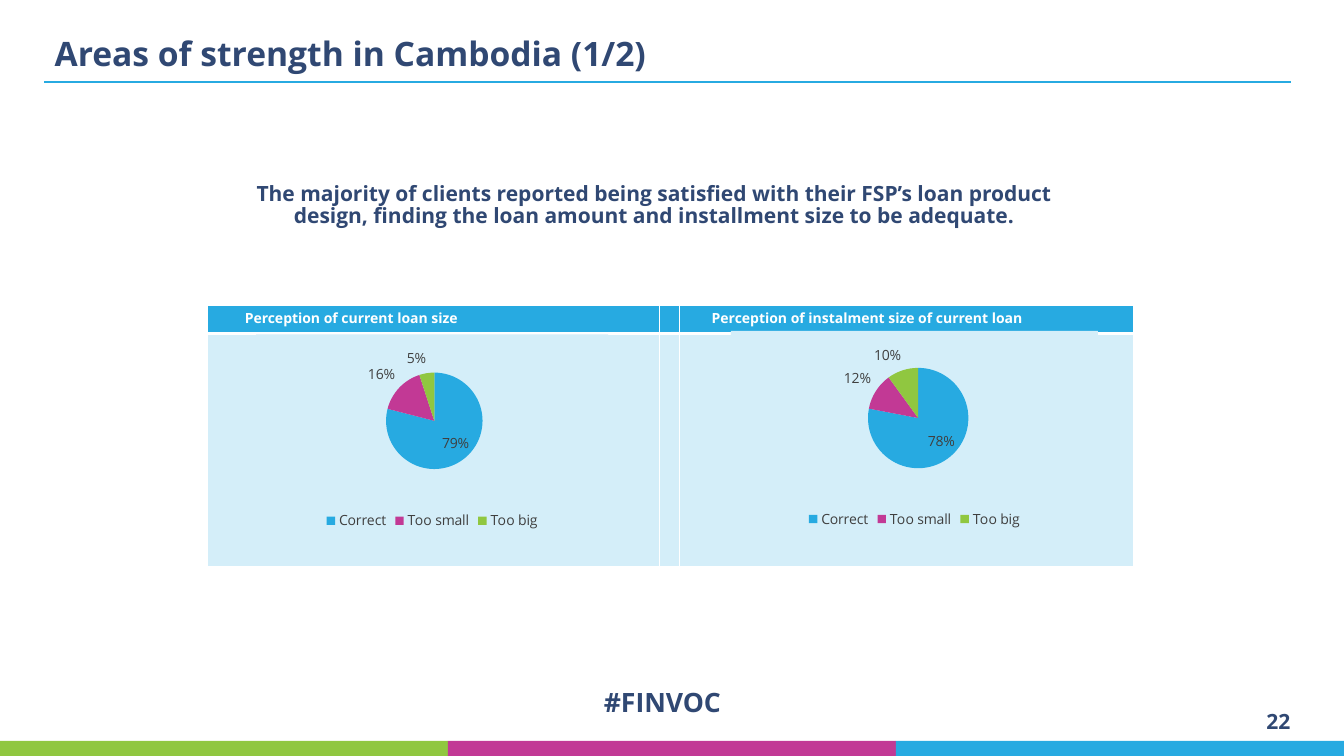
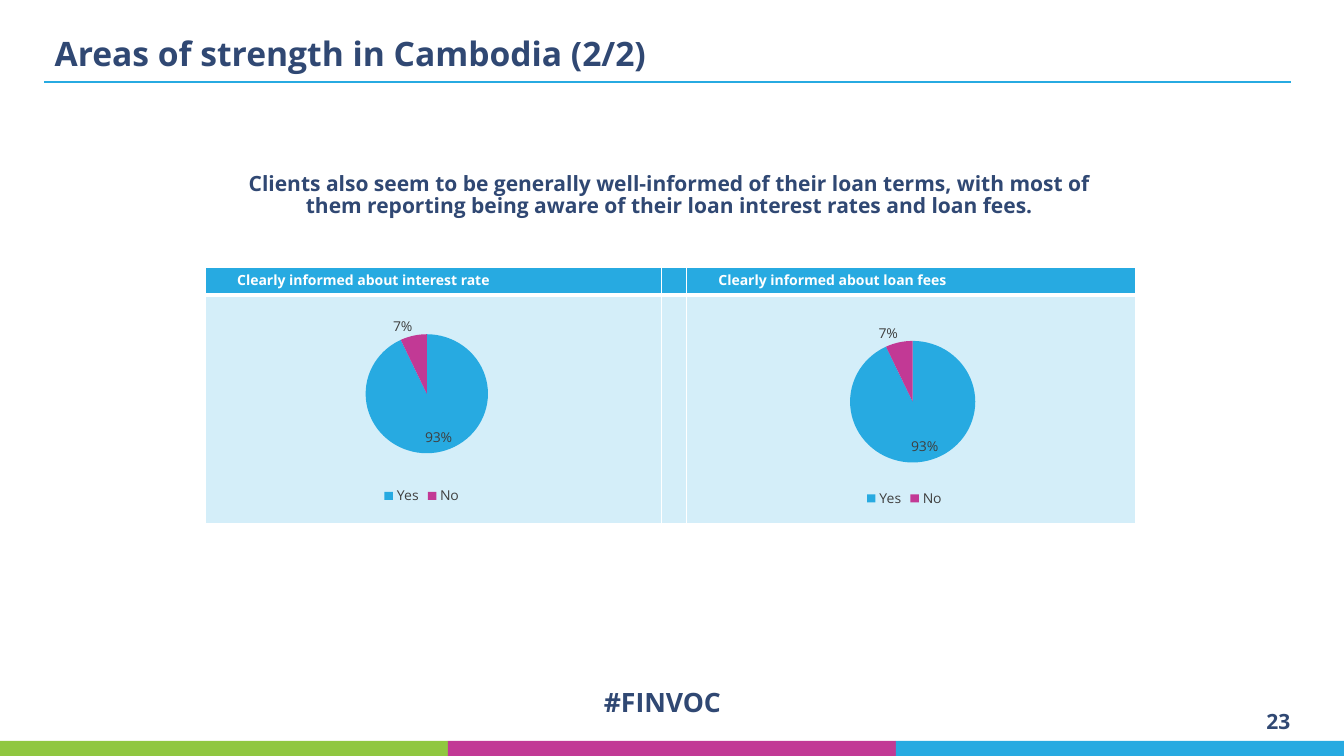
from lxml.etree import SubElement
from pptx import Presentation
from pptx.chart.data import CategoryChartData as ChartData
from pptx.dml.color import RGBColor as RGB
from pptx.enum.chart import XL_CHART_TYPE as CT, XL_LABEL_POSITION as LP, XL_LEGEND_POSITION as LG
from pptx.enum.shapes import MSO_CONNECTOR as CN, MSO_SHAPE as SH
from pptx.enum.text import MSO_ANCHOR as AN, MSO_AUTO_SIZE as AS, PP_ALIGN as AL
from pptx.oxml import parse_xml
from pptx.oxml.ns import nsdecls, qn
from pptx.util import Inches, Pt

COLORS = {"navy": "304873", "blue": "27AAE1", "pink": "C23995", "green": "90C740",
          "pale": "D4EEF9", "gray": "3F3F3F", "white": "FFFFFF"}
SLICES = ["blue", "pink", "green"]
BANDS = ["green", "pink", "blue"]
FONT = "Open Sans"
COLS, ROWS = 160, 90


def rgb(name):
    return RGB.from_string(COLORS[name])


class Deck:
    def __init__(self):
        self.prs = Presentation()
        self.prs.slide_width, self.prs.slide_height = Inches(13.33), Inches(7.5)
        self.s = None

    def x(self, cols):
        return round(self.prs.slide_width * cols / COLS)

    def y(self, rows):
        return round(self.prs.slide_height * rows / ROWS)

    def box(self, left, top, width, height):
        return self.x(left), self.y(top), self.x(width), self.y(height)

    def run(self, p, text, size, color="navy"):
        r = p.add_run()
        r.text = text
        r.font.name, r.font.size, r.font.bold = FONT, Pt(size), True
        r.font.color.rgb = rgb(color)

    def add_slide(self, title, page):
        self.s = self.prs.slides.add_slide(self.prs.slide_layouts[1])
        self.bands()
        self.rule()
        self.placeholder(0, (5.3, 3.5, 137.3, 6.2), title, 24, AL.LEFT, AN.MIDDLE)
        self.label((147.7, 83.4, 7.1, 4.8), page, 15, AL.RIGHT, AN.MIDDLE)
        self.label((70.7, 81.1, 18.2, 5), "#FINVOC", 19)

    def bands(self):
        width = COLS / len(BANDS)
        for i, color in enumerate(BANDS):
            sp = self.s.shapes.add_shape(SH.RECTANGLE, *self.box(i * width, 88.2, width, 1.8))
            sp.shadow.inherit = False
            sp.fill.solid()
            sp.fill.fore_color.rgb = rgb(color)
            sp.line.fill.background()

    def rule(self):
        line = self.s.shapes.add_connector(
            CN.STRAIGHT, self.x(5.3), self.y(9.72), self.x(153.7), self.y(9.72))
        line.line.color.rgb = rgb("blue")
        line.line.width = Pt(1.5)
        SubElement(line.element.spPr, qn("a:effectLst"))

    def placeholder(self, idx, area, text, size, align, anchor):
        sp = self.s.placeholders[idx]
        sp.left, sp.top, sp.width, sp.height = self.box(*area)
        tf = sp.text_frame
        tf.auto_size, tf.vertical_anchor = AS.NONE, anchor
        p = tf.paragraphs[0]
        pPr = p._p.get_or_add_pPr()
        pPr.set("marL", "0")
        pPr.set("indent", "0")
        SubElement(pPr, qn("a:buNone"))
        p.alignment, p.line_spacing, p.space_before = align, 0.9, Pt(0)
        self.run(p, text, size)

    def message(self, area, text):
        self.placeholder(1, area, text, 15, AL.CENTER, AN.TOP)

    def label(self, area, text, size, align=AL.LEFT, anchor=AN.TOP):
        tf = self.s.shapes.add_textbox(*self.box(*area)).text_frame
        tf.word_wrap, tf.vertical_anchor = True, anchor
        p = tf.paragraphs[0]
        p.alignment = align
        self.run(p, text, size)

    def cell(self, cell, fill, borders):
        tcPr = cell._tc.get_or_add_tcPr()
        for side, width in zip("LRTB", borders):
            tcPr.append(parse_xml(
                f'<a:ln{side} {nsdecls("a")} w="{Pt(width)}"><a:solidFill>'
                f'<a:srgbClr val="{COLORS["white"]}"/></a:solidFill></a:ln{side}>'))
        cell.fill.solid()
        cell.fill.fore_color.rgb = rgb(fill)
        cell.margin_left = cell.margin_right = Inches(0.07)
        cell.margin_top, cell.margin_bottom = Inches(0.08), 0

    def panel(self, left, top, widths, heights, heads, indents):
        gf = self.s.shapes.add_table(
            2, 3, *self.box(left, top, sum(widths), sum(heights)))
        table = gf.table
        table.horz_banding = False
        for row, height in zip(table.rows, heights):
            row.height = self.y(height)
        for i, width in enumerate(widths):
            table.columns[i].width = self.x(width)
            self.cell(table.cell(0, i), "blue", (1, 1, 1, 3))
            self.cell(table.cell(1, i), "pale", (1, 1, 3, 1))
        for i, (head, indent) in enumerate(zip(heads, indents)):
            p = table.cell(0, 2 * i).text_frame.paragraphs[0]
            p._p.get_or_add_pPr().set("marL", str(Inches(indent)))
            p.line_spacing = Pt(10)
            self.run(p, head, 10, "white")
        SubElement(table.cell(0, 1).text_frame.paragraphs[0]._p, qn("a:endParaRPr"), sz="800")

    def pie(self, area, cats, vals, plot_area=None):
        data = ChartData()
        data.categories = cats
        data.add_series("Series 1", vals)
        chart = self.s.shapes.add_chart(CT.PIE, *self.box(*area), data).chart
        chart.has_title = False
        chart.font.name, chart.font.size = FONT, Pt(10)
        chart.font.color.rgb = rgb("gray")
        chart.has_legend = True
        chart.legend.position = LG.BOTTOM
        chart.legend.include_in_layout = False
        plot = chart.plots[0]
        plot.vary_by_categories = True
        plot.has_data_labels = True
        labels = plot.data_labels
        labels.show_percentage, labels.show_value = True, False
        labels.number_format, labels.number_format_is_linked = "0%", False
        labels.position = LP.BEST_FIT
        for i, color in zip(range(len(vals)), SLICES):
            fmt = plot.series[0].points[i].format
            fmt.fill.solid()
            fmt.fill.fore_color.rgb = rgb(color)
            fmt.line.fill.background()
        self.chart_area(chart.element, plot_area)

    def chart_area(self, space, plot_area):
        space.find(qn("c:chart")).addnext(parse_xml(
            f'<c:spPr {nsdecls("c", "a")}><a:solidFill><a:srgbClr val="{COLORS["pale"]}"/>'
            '</a:solidFill><a:ln><a:noFill/></a:ln></c:spPr>'))
        if plot_area:
            area = space.find(".//" + qn("c:plotArea"))
            for old in area.findall(qn("c:layout")):
                area.remove(old)
            layout = SubElement(area, qn("c:layout"))
            area.insert(0, layout)
            manual = SubElement(layout, qn("c:manualLayout"))
            tags = ["layoutTarget", "xMode", "yMode", "x", "y", "w", "h"]
            for tag, val in zip(tags, ["inner", "edge", "edge", *plot_area]):
                SubElement(manual, qn("c:" + tag), val=str(val))


def main():
    deck = Deck()

    deck.add_slide("Areas of strength in Cambodia (1/2)", "22")
    deck.message((28.6, 21.2, 98.6, 13.4),
                 "The majority of clients reported being satisfied with their FSP’s loan product "
                 "design, finding the loan amount and installment size to be adequate.")
    deck.panel(24.7, 36.4, (53.8, 2.4, 54), (3.3, 27.7),
               ("Perception of current loan size",
                "Perception of instalment size of current loan"), (0.3, 0.25))
    sizes = ("Correct", "Too small", "Too big")
    deck.pie((30.5, 39.8, 41.9, 23.8), sizes, (79, 16, 5))
    deck.pie((87, 39.4, 43.7, 24), sizes, (78, 12, 10))

    deck.add_slide("Areas of strength in Cambodia (2/2)", "23")
    deck.message((28.4, 20, 102.6, 16),
                 "Clients also seem to be generally well-informed of their loan terms, with most of "
                 "them reporting being aware of their loan interest rates and loan fees.")
    deck.panel(24.4, 31.8, (54.4, 2.9, 53.5), (3.3, 27.2),
               ("Clearly informed about interest rate",
                "Clearly informed about loan fees"), (0.25, 0.25))
    answers = ("Yes", "No")
    deck.pie((29.7, 37.1, 41, 23.5), answers, (93, 7), (0.33, 0.09, 0.37, 0.62))
    deck.pie((87.5, 37.9, 40.3, 23), answers, (93, 7), (0.34, 0.09, 0.37, 0.65))

    deck.prs.save("out.pptx")


if __name__ == "__main__":
    main()
